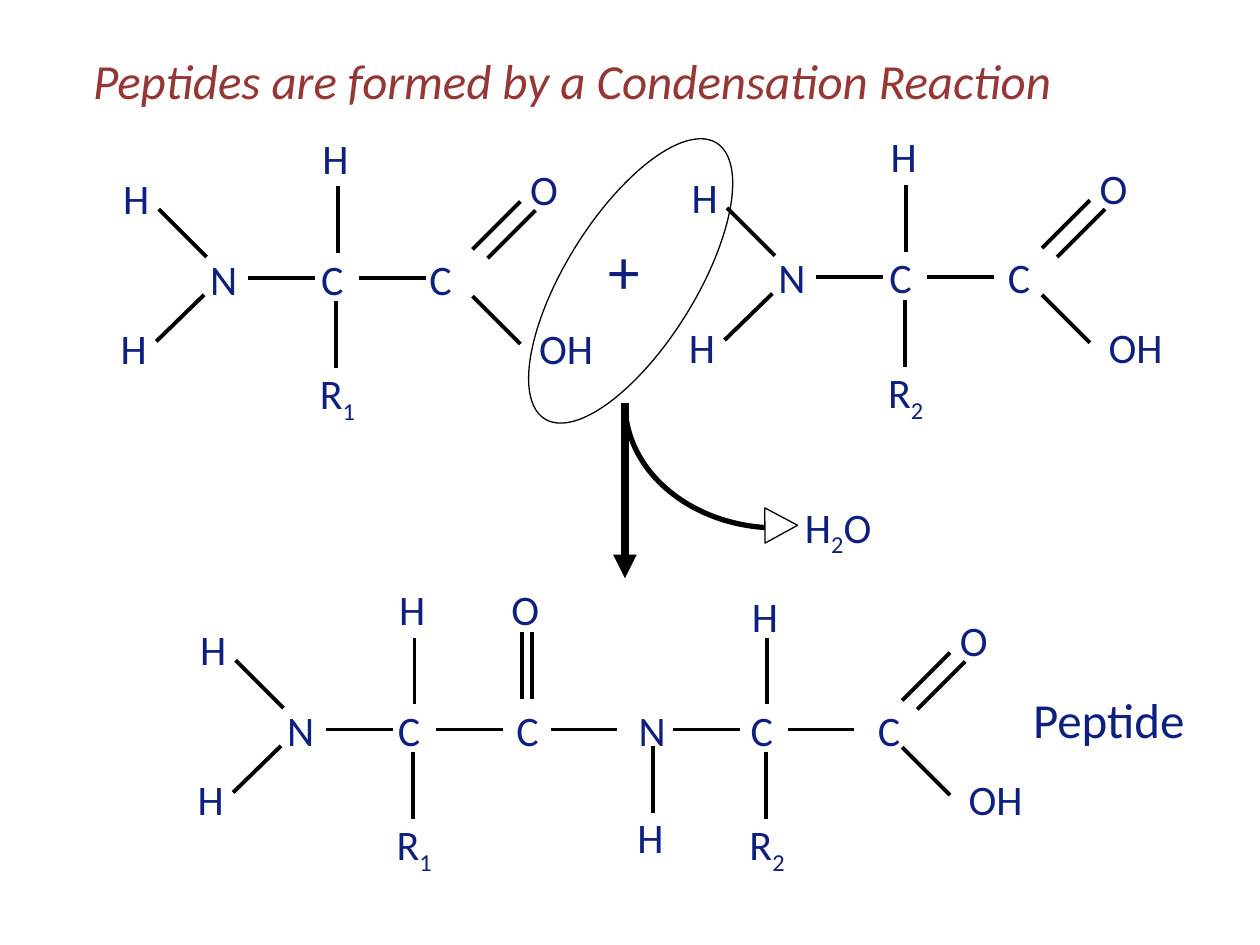
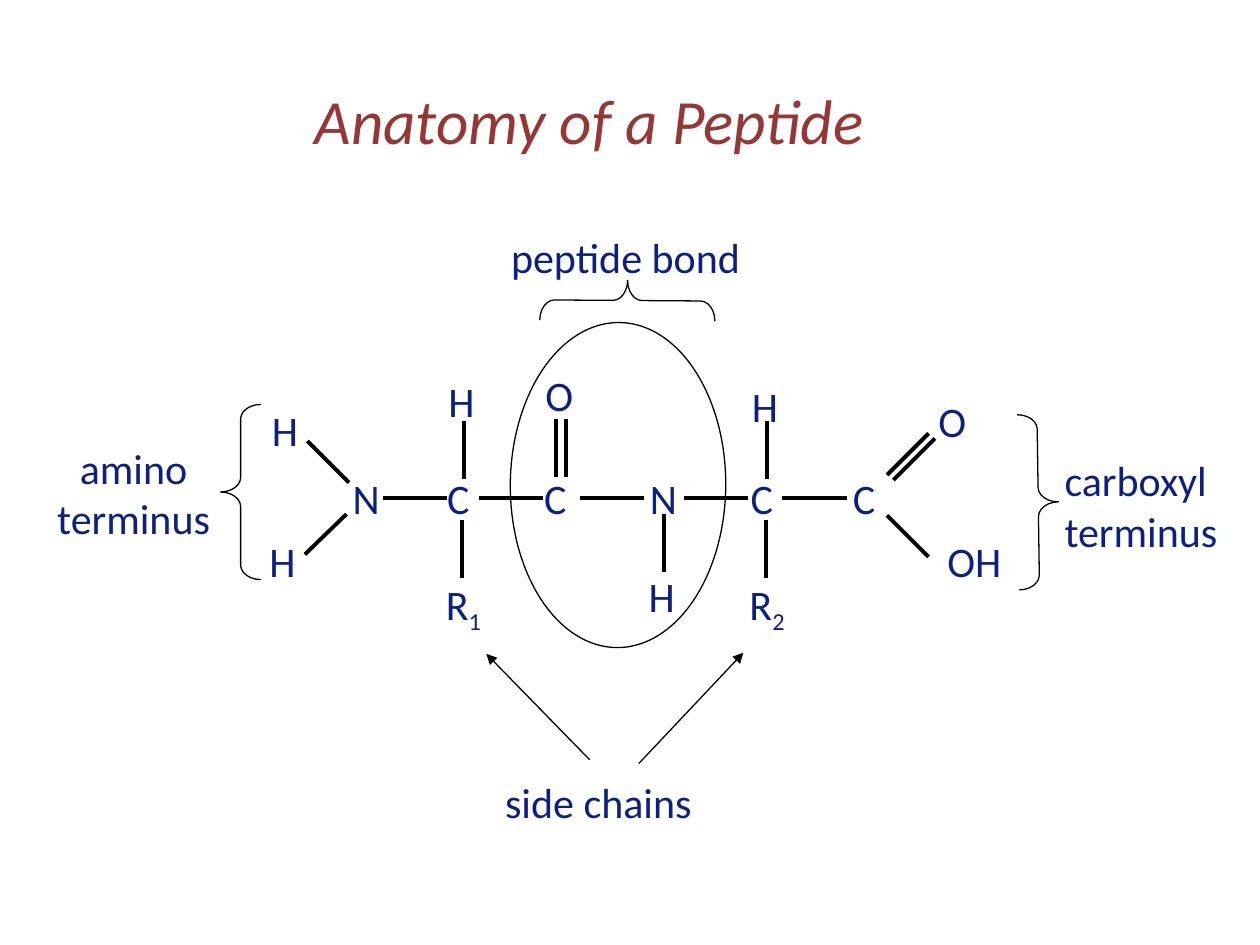
from dataclasses import dataclass

from lxml.etree import SubElement
from pptx import Presentation
from pptx.dml.color import RGBColor
from pptx.enum.shapes import MSO_CONNECTOR as CONN, MSO_SHAPE as SHAPE
from pptx.enum.text import MSO_AUTO_SIZE as AUTO, PP_ALIGN as ALIGN
from pptx.oxml.ns import qn
from pptx.util import Inches, Pt

SLIDE_W, SLIDE_H = Inches(10), Inches(7.5)
COL, ROW = SLIDE_W / 10, SLIDE_H / 7.5
NAVY = RGBColor(0x0E, 0x20, 0x7F)
MAROON = RGBColor(0x95, 0x37, 0x35)
BLACK = RGBColor(0, 0, 0)
WHITE = RGBColor(255, 255, 255)
LABEL = {"name": "Calibri", "size": Pt(24)}
TITLE = {"name": "Calibri", "size": Pt(28), "italic": True}
ATOM_W = {"H": 0.44, "N": 0.44, "C": 0.44, "O": 0.46, "OH": 0.7,
          "R1": 0.57, "R2": 0.57, "H2O": 0.82}
ATOM_H = 0.5
BOND_PT, THIN_PT = 2.25, 0.75


@dataclass
class Bonds:
    chain: float
    vertical: float
    diagonal: float
    double_gap: tuple
    inset: float
    lifts: tuple


WIDE = Bonds(0.53, 0.53, 0.38, (0.12, 0.07), 0.04, (0.48, 0.42))
TIGHT = Bonds(0.51, 0.46, 0.33, (0.05, 0.04), 0.09, (0.41, 0.37))


def place(x, y, w, h):
    return [int(v) for v in (x * COL, y * ROW, w * COL, h * ROW)]


def add_run(p, text, fmt, color, subscript=False):
    r = p.add_run()
    r.text = text
    for name, value in fmt.items():
        setattr(r.font, name, value)
    r.font.color.rgb = color
    if subscript:
        r.font._element.set("baseline", "-25000")


def add_text(s, lines, x, y, w, h, fmt=LABEL, color=NAVY, align=ALIGN.LEFT):
    tf = s.shapes.add_textbox(*place(x, y, w, h)).text_frame
    tf.word_wrap = False
    tf.auto_size = AUTO.SHAPE_TO_FIT_TEXT
    for i, line in enumerate(lines):
        p = tf.paragraphs[0] if i == 0 else tf.add_paragraph()
        p.alignment = align
        add_run(p, line, fmt, color)
    return tf


def atom(s, label, x, y):
    tf = add_text(s, [], x, y, ATOM_W[label], ATOM_H)
    digits = [i for i, ch in enumerate(label) if ch.isdigit()]
    cut = digits[0] if digits else len(label)
    parts = label[:cut], label[cut:cut + 1], label[cut + 1:]
    for part in filter(None, parts):
        add_run(tf.paragraphs[0], part, LABEL, NAVY, part.isdigit())


def add_line(s, x1, y1, x2, y2, width=BOND_PT, arrow=False):
    c = s.shapes.add_connector(CONN.STRAIGHT, *place(x1, y1, x2, y2))
    c.line.color.rgb = BLACK
    c.line.width = Pt(width)
    if arrow:
        SubElement(c.line._get_or_add_ln(), qn("a:tailEnd"), type="triangle")
    SubElement(c._element.spPr, qn("a:effectLst"))


def bond(s, x, y, dx, dy):
    add_line(s, x, y, x + dx, y + dy)
    return x + dx, y + dy


def add_outline(s, kind, x, y, w, h, rotation=0, width=THIN_PT, fill=None):
    sp = s.shapes.add_shape(kind, *place(x, y, w, h))
    sp.shadow.inherit = False
    sp.rotation = rotation
    if fill is None:
        sp.fill.background()
    else:
        sp.fill.solid()
        sp.fill.fore_color.rgb = fill
    sp.line.color.rgb = BLACK
    sp.line.width = Pt(width)
    return sp


def brace(s, x, y, rotation=0):
    sp = add_outline(s, SHAPE.LEFT_BRACE, x, y, 0.32, 1.39, rotation)
    sp.adjustments[0] = 0.362


def backbone(s, atoms, starts, y, b):
    for label, x in atoms:
        atom(s, label, x, y)
    for x in starts:
        bond(s, x, y + 0.25, b.chain, 0)


def amine(s, x, y, b):
    d = b.diagonal
    ex, ey = bond(s, x + 0.07, y + 0.04 + b.inset, -d, -d)
    atom(s, "H", ex - 0.38, ey - 0.34)
    ex, ey = bond(s, x + 0.05, y + 0.38, -d, d - 0.01)
    atom(s, "H", ex - 0.38, ey - 0.2)


def alpha_carbon(s, x, y, residue, lift, b):
    ex, ey = bond(s, x + 0.23, y + 0.01 + b.inset, 0, -b.vertical)
    atom(s, "H", ex - 0.22, ey - lift)
    ex, ey = bond(s, x + 0.22, y + 0.43, 0, b.vertical)
    atom(s, residue, ex - 0.23, ey - 0.05)


def carbonyl(s, x, y, b):
    for gap in (0.08, 0):
        ex, ey = bond(s, x + gap, y - 0.05 + b.inset * 1.5, 0, -b.vertical)
    atom(s, "O", ex - 0.18, ey - 0.44)


def amide_hydrogen(s, x, y, b):
    ex, ey = bond(s, x + 0.21, y + 0.38, 0, b.vertical)
    atom(s, "H", ex - 0.22, ey - 0.06)


def carboxyl(s, x, y, b):
    d = b.diagonal
    gx, gy = b.double_gap
    top = y - 0.02 + b.inset
    bond(s, x + gx, top + gy, d, -d)
    ex, ey = bond(s, x, top, d, -d)
    atom(s, "O", ex - 0.02, ey - 0.35)
    ex, ey = bond(s, x, y + 0.39, d, d)
    atom(s, "OH", ex + 0.05, ey - 0.22)


def amino_acid(s, x, y, residue, last_c, acid):
    backbone(s, [("N", x), ("C", x + 0.88), ("C", x + last_c)],
             [x + 0.4, x + 1.28], y, WIDE)
    amine(s, x, y, WIDE)
    alpha_carbon(s, x + 0.88, y, residue, WIDE.lifts[0], WIDE)
    carboxyl(s, x + acid, y, WIDE)


def peptide(s, x, y, offsets, starts, double_x, acid, b):
    xs = [x + dx for dx in offsets]
    backbone(s, list(zip("NCCNCC", xs)), [x + dx for dx in starts], y, b)
    amine(s, x, y, b)
    alpha_carbon(s, xs[1], y, "R1", b.lifts[0], b)
    carbonyl(s, x + double_x, y, b)
    amide_hydrogen(s, xs[3], y, b)
    alpha_carbon(s, xs[4], y, "R2", b.lifts[1], b)
    carboxyl(s, x + acid, y, b)


def water_release(s, x, y):
    add_line(s, x, y, x, y + 1.39, 4.5, arrow=True)
    add_outline(s, SHAPE.ARC, x, y - 0.99, 2.42, 1.98, 180, 3)
    add_outline(s, SHAPE.ISOSCELES_TRIANGLE, x + 1.1, y + 0.84, 0.28, 0.26,
                89.6, fill=WHITE)
    atom(s, "H2O", x + 1.33, y + 0.73)


def condensation_slide(s):
    add_text(s, ["Peptides are formed by a Condensation Reaction"],
             0.64, 0.35, 7.99, 0.57, TITLE, MAROON)
    amino_acid(s, 1.57, 1.96, "R1", 1.74, 2.18)
    amino_acid(s, 6.08, 1.95, "R2", 1.82, 2.19)
    add_text(s, ["+"], 4.73, 1.79, 0.49, 0.7, {**LABEL, "size": Pt(36)})
    add_outline(s, SHAPE.OVAL, 4.49, 0.94, 1.03, 2.58, 31.9)
    water_release(s, 4.96, 3.2)
    peptide(s, 2.18, 5.54, (0, 0.88, 1.82, 2.79, 3.68, 4.69),
            (0.41, 1.28, 2.19, 3.16, 4.07), 1.96, 4.98, WIDE)
    add_text(s, ["Peptide"], 8.1, 5.42, 1.52, 0.57, {**LABEL, "size": Pt(28)})


def anatomy_slide(s):
    add_text(s, ["Anatomy of a Peptide"], 2.4, 0.6, 4.72, 0.71,
             {**TITLE, "size": Pt(36)}, MAROON)
    peptide(s, 2.7, 3.7, (0, 0.75, 1.52, 2.36, 3.16, 3.97),
            (0.34, 1.1, 1.9, 2.73, 3.51), 1.71, 4.34, TIGHT)
    add_outline(s, SHAPE.OVAL, 4.05, 2.56, 1.71, 2.58, 0.4)
    for x, y, rotation in ((1.75, 3.21, 0), (8.08, 3.29, 179.2),
                           (4.82, 1.69, 90.4)):
        brace(s, x, y, rotation)
    add_text(s, ["amino", "terminus"], 0.32, 3.46, 1.48, 0.9,
             align=ALIGN.CENTER)
    add_text(s, ["carboxyl", "terminus"], 8.35, 3.56, 1.48, 0.9)
    add_text(s, ["peptide bond"], 3.9, 1.79, 2.13, 0.5, align=ALIGN.CENTER)
    add_text(s, ["side chains"], 3.91, 6.11, 2.02, 0.5)
    add_line(s, 4.68, 6.03, 3.86, 5.19, THIN_PT, arrow=True)
    add_line(s, 5.07, 6.06, 5.9, 5.18, THIN_PT, arrow=True)


def main():
    prs = Presentation()
    prs.slide_width, prs.slide_height = SLIDE_W, SLIDE_H
    for build in (condensation_slide, anatomy_slide):
        build(prs.slides.add_slide(prs.slide_layouts[6]))
    prs.save("out.pptx")


if __name__ == "__main__":
    main()
